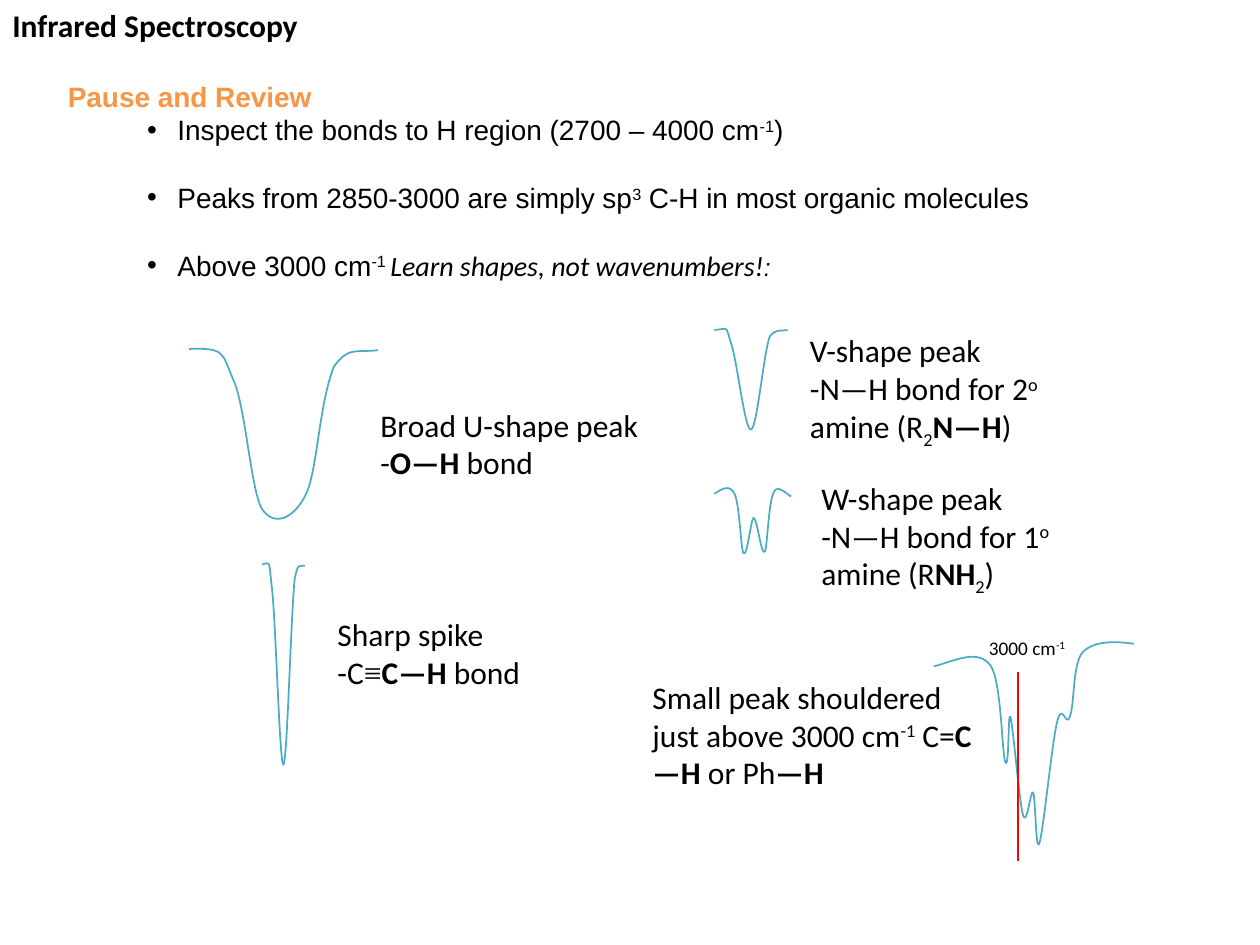
from lxml.etree import SubElement
from pptx import Presentation
from pptx.dml.color import RGBColor
from pptx.enum.shapes import MSO_CONNECTOR
from pptx.enum.text import MSO_AUTO_SIZE as AutoSize
from pptx.oxml.ns import qn
from pptx.util import Inches, Pt

BLACK = RGBColor(0x00, 0x00, 0x00)
ORANGE = RGBColor(0xF7, 0x96, 0x46)
TEAL = RGBColor(0x4B, 0xAC, 0xC6)
RED = RGBColor(0xFF, 0x00, 0x00)

BODY = {"name": "Arial", "size": Pt(16)}
CAPTION = {"name": "Calibri", "size": Pt(18)}
BOLD = {"bold": True}
SUP = {"baseline": 30000}
SUB = {"baseline": -25000}

# Each curve: start point, then (control, control, end) triples, inches from its box corner
U_CURVE = [(0, .02),
           (.29, .01), (.26, .05), (.35, .26), (.45, .47), (.49, 1.14), (.58, 1.29),
           (.68, 1.44), (.84, 1.36), (.93, 1.17), (1.02, .98), (1.03, .47), (1.15, .16),
           (1.27, 0), (1.31, .05), (1.5, .03)]
V_CURVE = [(0, .04),
           (.11, .03), (.09, 0), (.13, .14), (.18, .27), (.24, .84), (.29, .83),
           (.34, .82), (.39, .22), (.44, .09), (.49, .03), (.51, .05), (.58, .04)]
SPIKE_CURVE = [(0, .06),
               (.07, .05), (.05, 0), (.08, .26), (.11, .53), (.14, 1.66), (.17, 1.65),
               (.2, 1.63), (.23, .44), (.26, .17), (.29, .04), (.29, .08), (.34, .07)]
W_CURVE = [(0, .09),
           (.06, .05), (.12, .01), (.16, .09), (.2, .17), (.21, .53), (.23, .56),
           (.26, .6), (.29, .29), (.31, .28), (.34, .28), (.37, .58), (.4, .55),
           (.42, .52), (.43, .15), (.47, .08), (.5, 0), (.59, .11), (.61, .11)]
SHOULDER_CURVE = [(0, .21),
                  (.18, .16), (.35, .07), (.45, .2), (.54, .32), (.54, .9), (.57, .97),
                  (.6, 1.04), (.59, .54), (.61, .61), (.63, .68), (.68, 1.29), (.71, 1.39),
                  (.74, 1.49), (.77, 1.18), (.79, 1.21), (.81, 1.25), (.81, 1.71), (.84, 1.61),
                  (.87, 1.52), (.94, .81), (.98, .65), (1.02, .48), (1.05, .7), (1.08, .61),
                  (1.12, .52), (1.1, .2), (1.18, .1), (1.27, 0), (1.46, .01), (1.59, .03)]

# Curve, its corner, caption box, whether the caption wraps, caption paragraphs
PEAKS = [
    (U_CURVE, (1.5, 2.75), (2.92, 3.17, 2.46, .71), False,
     [[("Broad U-shape peak", {})],
      [("-", {}), ("O—H", BOLD), (" bond", {})]]),
    (V_CURVE, (5.67, 2.58), (6.33, 2.58, 2.58, 1.01), True,
     [[("V-shape peak", {})],
      [("-N—H bond for 2", {}), ("o", SUP), (" amine (R", {}), ("2", SUB),
       ("N—H", BOLD), (")", {})]]),
    (SPIKE_CURVE, (2.08, 4.42), (2.58, 4.83, 1.81, .71), False,
     [[("Sharp spike", {})],
      [("-C", {}), ("≡", {"name": "Times New Roman"}), ("C—H", BOLD), (" bond", {})]]),
    (W_CURVE, (5.67, 3.83), (6.42, 3.75, 2.58, 1.01), True,
     [[("W-shape peak", {})],
      [("-N—H bond for 1", {}), ("o", SUP), (" amine (R", {}), ("NH", BOLD),
       ("2", SUB), (")", {})]]),
]
SHOULDER_CAPTION = [[("Small peak shouldered just above 3000 cm", {}), ("-1", SUP),
                     (" C=", {}), ("C—H", BOLD), (" or Ph", {}), ("—H", BOLD)]]

REVIEW_HEADING = [("Pause and Review", {"bold": True, "color": ORANGE})]
REVIEW_POINTS = [
    [("Inspect the bonds to H region (2700 – 4000 cm", {}), ("-1", SUP), (")", {})],
    [("Peaks from 2850-3000 are simply sp", {}), ("3", SUP),
     (" C-H in most organic molecules", {})],
    [("Above 3000 cm", {}), ("-1 ", SUP),
     ("Learn shapes, not wavenumbers!", {"name": "Calibri", "italic": True}),
     (":", {"size": Pt(14), "italic": True})],
]


def add_run(paragraph, words, formats):
    run = paragraph.add_run()
    run.text = words
    for key, value in formats.items():
        if key == "color":
            run.font.color.rgb = value
        elif key == "baseline":
            run._r.get_or_add_rPr().set("baseline", str(value))
        else:
            setattr(run.font, key, value)


def add_text(shapes, box, paragraphs, base, wrap=True):
    """Add a text box whose runs take the base format plus their own."""
    frame = shapes.add_textbox(*map(Inches, box)).text_frame
    frame.word_wrap = wrap
    frame.auto_size = AutoSize.SHAPE_TO_FIT_TEXT
    for number, runs in enumerate(paragraphs):
        paragraph = frame.add_paragraph() if number else frame.paragraphs[0]
        for words, formats in runs:
            add_run(paragraph, words, {"color": BLACK, **base, **formats})
    return frame


def set_indent(paragraph, level, margin, hanging):
    paragraph.level = level
    properties = paragraph._p.get_or_add_pPr()
    properties.set("marL", str(Inches(margin)))
    properties.set("indent", str(-Inches(hanging)))
    return properties


def add_review(shapes, box):
    frame = add_text(shapes, box, [REVIEW_HEADING, *REVIEW_POINTS], BODY)
    heading, *points = frame.paragraphs
    set_indent(heading, 1, .94, .5)
    for point in points:
        properties = set_indent(point, 2, 1.31, .24)
        if point is not points[0]:
            point.space_before = Pt(19.5)
        SubElement(properties, qn("a:buFont")).set("typeface", "Arial")
        SubElement(properties, qn("a:buChar")).set("char", "•")


def add_curve(shapes, corner, points):
    """Draw the points as an open chain of cubic Bézier segments."""
    left, top = corner
    start, *rest = [(Inches(left + x), Inches(top + y)) for x, y in points]
    builder = shapes.build_freeform(*start)
    builder.add_line_segments(rest, close=False)
    curve = builder.convert_to_shape()
    curve.shadow.inherit = False
    curve.fill.background()
    curve.line.color.rgb = TEAL
    curve.line.width = Pt(1)
    outline = curve._element.find(".//" + qn("a:path"))
    segments = outline.findall(qn("a:lnTo"))
    for first in range(0, len(segments), 3):
        bezier = SubElement(outline, qn("a:cubicBezTo"))
        for segment in segments[first:first + 3]:
            bezier.append(segment[0])
            outline.remove(segment)


def add_peak(shapes, points, corner, caption_box, wrap, caption):
    add_curve(shapes, corner, points)
    add_text(shapes, caption_box, caption, CAPTION, wrap)


def add_shouldered_peak(shapes, corner, caption_box):
    left, top = corner
    spectrum = shapes.add_group_shape().shapes
    add_curve(spectrum, corner, SHOULDER_CURVE)
    marker_x = Inches(left + .67)
    marker = spectrum.add_connector(MSO_CONNECTOR.STRAIGHT, marker_x, Inches(top + 1.75),
                                    marker_x, Inches(top + .25))
    marker.line.color.rgb = RED
    marker.line.width = Pt(1)
    SubElement(marker._element.spPr, qn("a:effectLst"))
    add_text(spectrum, (left + .34, top - .08, .88, .29),
             [[("3000 cm", {}), ("-1", SUP)]], {**CAPTION, "size": Pt(11)}, wrap=False)
    add_text(shapes, caption_box, SHOULDER_CAPTION, CAPTION)


def main():
    deck = Presentation()
    deck.slide_width, deck.slide_height = Inches(10), Inches(7.5)
    shapes = deck.slides.add_slide(deck.slide_layouts[6]).shapes
    add_text(shapes, (0, 0, 3, .4), [[("Infrared Spectroscopy", BOLD)]], CAPTION, wrap=False)
    add_review(shapes, (0, .58, 9.25, 1.72))
    for peak in PEAKS:
        add_peak(shapes, *peak)
    add_shouldered_peak(shapes, (7.41, 5.08), (5.08, 5.33, 2.75, 1.01))
    deck.save("out.pptx")


if __name__ == "__main__":
    main()
